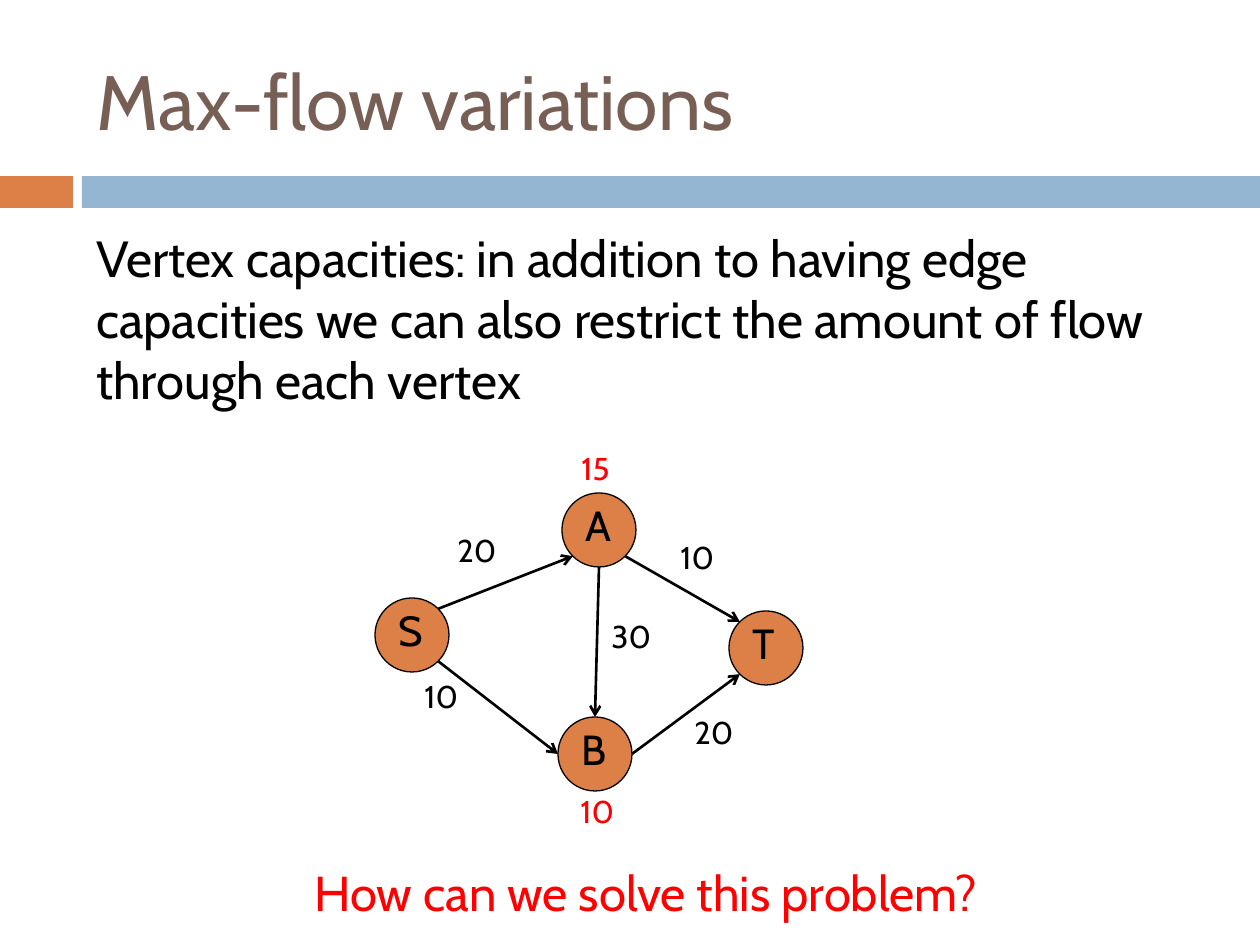
from dataclasses import dataclass
from math import cos, radians, sin

from lxml.etree import SubElement
from pptx import Presentation
from pptx.dml.color import RGBColor
from pptx.enum.shapes import MSO_CONNECTOR as Connector, MSO_SHAPE as Shape
from pptx.enum.text import MSO_ANCHOR as Anchor, MSO_AUTO_SIZE as AutoSize
from pptx.oxml.ns import qn
from pptx.util import Emu, Pt

PX_PER_INCH = 126


def px(length):
    return Emu(round(length * 914400 / PX_PER_INCH))


@dataclass(frozen=True)
class Theme:
    font: str = "Cabin"
    title_color: str = "775F55"
    orange: str = "DD8047"
    blue: str = "94B6D2"
    ink: str = "000000"
    red: str = "FF0000"
    title_size: int = 44
    body_size: int = 29
    question_size: int = 28
    node_size: int = 24
    label_size: int = 18
    outline: float = 0.75
    edge: float = 1.5


class SlideBuilder:
    def __init__(self, slide, theme):
        self.slide = slide
        self.theme = theme

    def shape(self, kind, left, top, width, height, fill, outlined=False):
        shape = self.slide.shapes.add_shape(kind, px(left), px(top), px(width), px(height))
        shape.shadow.inherit = False
        shape.fill.solid()
        shape.fill.fore_color.rgb = RGBColor.from_string(fill)
        if outlined:
            shape.line.color.rgb = RGBColor.from_string(self.theme.ink)
            shape.line.width = Pt(self.theme.outline)
        else:
            shape.line.fill.background()
        return shape

    def text(self, words, left, top, width, height, size, color,
             anchor=Anchor.TOP, grow=False):
        box = self.slide.shapes.add_textbox(px(left), px(top), px(width), px(height))
        frame = box.text_frame
        frame.word_wrap = True
        frame.vertical_anchor = anchor
        if grow:
            frame.auto_size = AutoSize.SHAPE_TO_FIT_TEXT
        run = frame.paragraphs[0].add_run()
        run.text = words
        run.font.name = self.theme.font
        run.font.size = Pt(size)
        run.font.color.rgb = RGBColor.from_string(color)

    def label(self, words, left, top, color):
        self.text(words, left, top, 94, 50, self.theme.label_size, color, grow=True)

    def node(self, name, left, top):
        self.shape(Shape.OVAL, left, top, NODE, NODE, self.theme.orange, outlined=True)
        self.text(name, left + 11, top, 63, 63, self.theme.node_size,
                  self.theme.ink, grow=True)

    def arrow(self, start, end):
        line = self.slide.shapes.add_connector(
            Connector.STRAIGHT, *(px(value) for value in (*start, *end)))
        line.line.color.rgb = RGBColor.from_string(self.theme.ink)
        line.line.width = Pt(self.theme.edge)
        SubElement(line.line._get_or_add_ln(), qn("a:tailEnd"), type="arrow")
        SubElement(line._element.spPr, qn("a:effectLst"))


NODE = 74  # diameter of a vertex
NODES = {"S": (375, 598), "A": (562, 493), "B": (558, 717), "T": (729, 611)}

# Edges: from, angle on its rim, to, angle on its rim (clockwise from the right)
EDGES = [
    ("S", -45, "A", 135),
    ("S", 45, "B", 180),
    ("B", 0, "T", 135),
    ("A", 90, "B", -90),
    ("A", 45, "T", -135),
]
EDGE_CAPACITIES = [("20", 445, 525), ("20", 682, 707), ("10", 412, 671),
                   ("10", 668, 532), ("30", 599, 611)]
VERTEX_CAPACITIES = [("15", 569, 443), ("10", 568, 786)]


def rim_point(name, angle):
    left, top = NODES[name]
    radius = NODE / 2
    return (left + radius * (1 + cos(radians(angle))),
            top + radius * (1 + sin(radians(angle))))


def main():
    presentation = Presentation()
    presentation.slide_width, presentation.slide_height = px(1260), px(945)
    theme = Theme()
    builder = SlideBuilder(
        presentation.slides.add_slide(presentation.slide_layouts[6]), theme)

    # Divider band
    builder.shape(Shape.RECTANGLE, 0, 176, 73, 32, theme.orange)
    builder.shape(Shape.RECTANGLE, 82, 176, 1178, 32, theme.blue)

    # Title and statement
    builder.text("Max-flow variations", 84, 32, 1124, 136,
                 theme.title_size, theme.title_color, Anchor.MIDDLE)
    builder.text("Vertex capacities: in addition to having edge capacities "
                 "we can also restrict the amount of flow through each vertex",
                 84, 221, 1124, 198, theme.body_size, theme.ink)

    # Flow network
    for name, (left, top) in NODES.items():
        builder.node(name, left, top)
    for source, leave, target, arrive in EDGES:
        builder.arrow(rim_point(source, leave), rim_point(target, arrive))

    # Capacities
    for capacity in EDGE_CAPACITIES:
        builder.label(*capacity, theme.ink)
    for capacity in VERTEX_CAPACITIES:
        builder.label(*capacity, theme.red)

    # Question
    builder.text("How can we solve this problem?", 302, 856, 733, 72,
                 theme.question_size, theme.red, grow=True)

    presentation.save("out.pptx")


if __name__ == "__main__":
    main()
